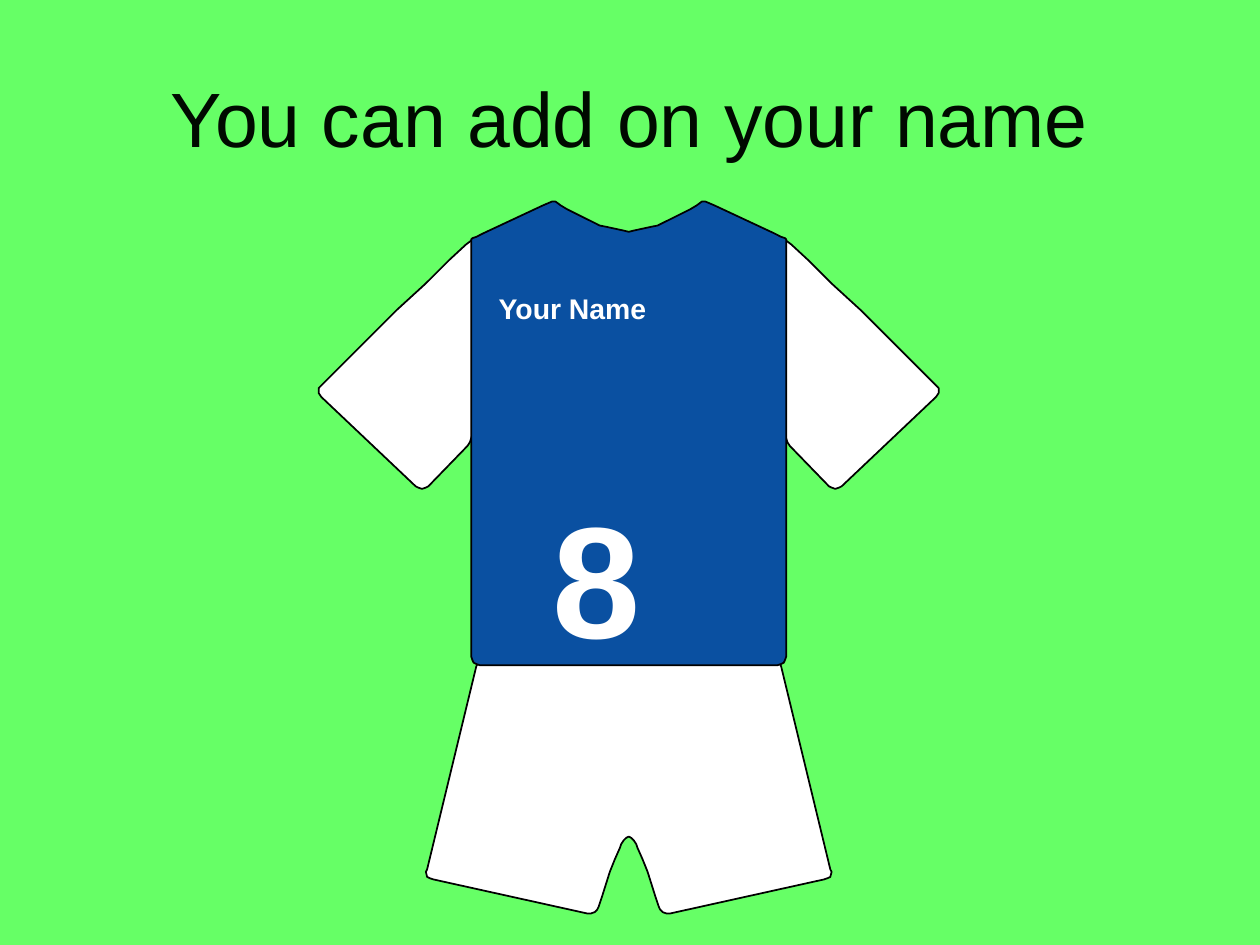
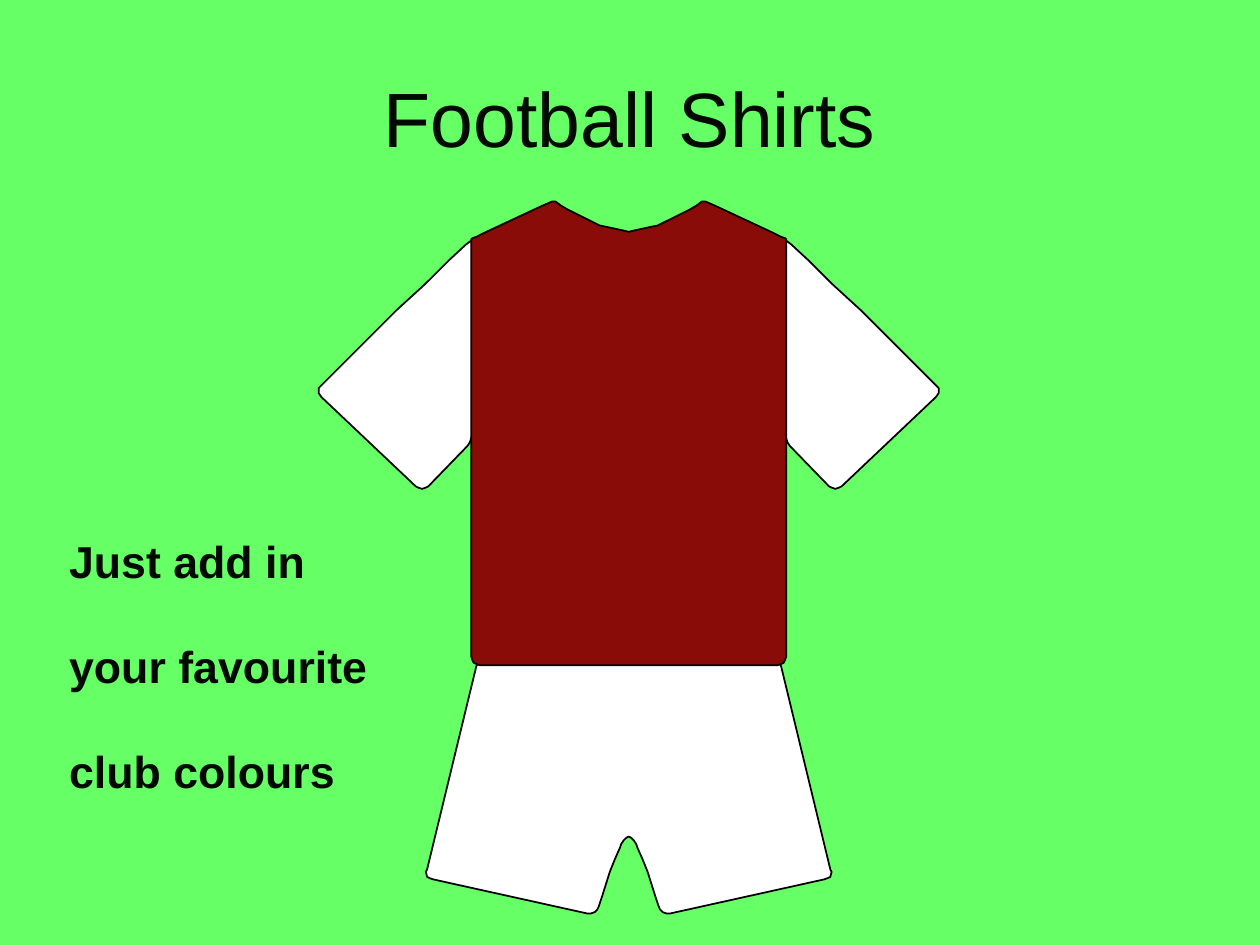
"""Build two slides that show a football kit ready to be personalised."""
from dataclasses import dataclass

from pptx import Presentation
from pptx import util as u
from pptx.dml.color import RGBColor
from pptx.enum import text


@dataclass(frozen=True)
class Theme:
    """Colours, font and type sizes of the deck."""
    grass: str = "66FF66"
    ink: str = "000A00"
    outline: str = "000000"
    white: str = "FFFFFF"
    blue: str = "0A50A1"
    red: str = "890C08"
    font: str = "Arial"
    title_size: int = 44
    message_size: int = 44
    name_size: int = 28
    number_size: int = 156
    lowered: str = "-25000"


THEME = Theme()
KIT_CENTRE = 4.99

LEFT_SHORTS = [
    (4.99, 5.22), (3.85, 5.22), (3.83, 5.23), (3.8, 5.25), (3.78, 5.29),
    (3.39, 6.9), (3.38, 6.92), (3.39, 6.96), (3.41, 6.97), (3.44, 6.98),
    (4.66, 7.25), (4.69, 7.25), (4.72, 7.24), (4.74, 7.22), (4.75, 7.2),
    (4.78, 7.11), (4.84, 6.92), (4.88, 6.82), (4.92, 6.73), (4.93, 6.7),
    (4.95, 6.67), (4.97, 6.65), (4.99, 6.64),
]
LEFT_SLEEVE = [
    (3.71, 3.54), (3.73, 3.51), (3.75, 3.45), (3.76, 3.42), (3.76, 1.9),
    (3.74, 1.91), (3.7, 1.94), (3.57, 2.06), (3.38, 2.25), (3.15, 2.46),
    (2.74, 2.87), (2.55, 3.06), (2.53, 3.08), (2.53, 3.12), (2.55, 3.15),
    (3.3, 3.86), (3.32, 3.87), (3.35, 3.88), (3.38, 3.87), (3.4, 3.86),
]
LEFT_SHIRT = [
    (4.99, 1.84), (4.95, 1.83), (4.81, 1.8), (4.76, 1.79), (4.72, 1.77),
    (4.64, 1.73), (4.56, 1.69), (4.5, 1.66), (4.45, 1.63), (4.41, 1.6),
    (4.38, 1.6), (4.31, 1.63), (3.84, 1.85), (3.78, 1.88), (3.75, 1.89),
    (3.74, 1.9), (3.74, 5.21), (3.75, 5.24), (3.76, 5.26), (3.78, 5.27),
    (3.81, 5.28), (4.99, 5.28),
]


def mirror(points):
    """Reflect points across the centre line of the kit, in reverse order."""
    return [(2 * KIT_CENTRE - x, y) for x, y in reversed(points)]


def add_outline(group, points, colour):
    """Draw a filled, closed outline inside a group."""
    start, *rest = [(u.Inches(x), u.Inches(y)) for x, y in points]
    builder = group.shapes.build_freeform(*start)
    builder.add_line_segments(rest, close=True)
    shape = builder.convert_to_shape()
    shape.shadow.inherit = False
    shape.fill.solid()
    shape.fill.fore_color.rgb = RGBColor.from_string(colour)
    shape.line.color.rgb = RGBColor.from_string(THEME.outline)
    shape.line.width = u.Pt(1)


def add_kit(page, shirt_colour):
    """Draw the shorts, both sleeves and the coloured shirt."""
    group = page.shapes.add_group_shape()
    add_outline(group, LEFT_SHORTS + mirror(LEFT_SHORTS), THEME.white)
    add_outline(group, LEFT_SLEEVE, THEME.white)
    add_outline(group, mirror(LEFT_SLEEVE), THEME.white)
    add_outline(group, LEFT_SHIRT + mirror(LEFT_SHIRT), shirt_colour)


def add_text(page, place, words, size, colour, bold=False, wrap=True,
             anchor=text.MSO_ANCHOR.TOP):
    """Add a one-paragraph text box and return it."""
    box = page.shapes.add_textbox(*map(u.Inches, place))
    frame = box.text_frame
    frame.word_wrap = wrap
    frame.vertical_anchor = anchor
    para = frame.paragraphs[0]
    para.add_run().text = words
    para.font.name = THEME.font
    para.font.size = u.Pt(size)
    para.font.bold = bold
    para.font.color.rgb = RGBColor.from_string(colour)
    return box


def add_title(page, words):
    """Add the centred slide title."""
    box = add_text(page, (0.5, 0.3, 9, 1.25), words, THEME.title_size,
                   THEME.ink, anchor=text.MSO_ANCHOR.MIDDLE)
    box.text_frame.paragraphs[0].alignment = text.PP_ALIGN.CENTER


def add_lowered_text(page, place, words, size, colour, **options):
    """Add bold subscript text in a box that grows with it."""
    box = add_text(page, place, words, size, colour, bold=True, **options)
    box.text_frame.auto_size = text.MSO_AUTO_SIZE.SHAPE_TO_FIT_TEXT
    span = box.text_frame.paragraphs[0].runs[0]
    span._r.get_or_add_rPr().set("baseline", THEME.lowered)


def add_kit_page(deck, title, shirt_colour):
    """Add a green slide with a kit and a title."""
    page = deck.slides.add_slide(deck.slide_layouts[6])
    page.background.fill.solid()
    page.background.fill.fore_color.rgb = RGBColor.from_string(THEME.grass)
    add_kit(page, shirt_colour)
    add_title(page, title)
    return page


def main():
    """Build and save the deck."""
    deck = Presentation()
    deck.slide_width, deck.slide_height = u.Inches(10), u.Inches(7.5)

    name_page = add_kit_page(deck, "You can add on your name", THEME.blue)
    add_lowered_text(name_page, (4.29, 2.31, 1.41, 2.7), "8",
                     THEME.number_size, THEME.white, wrap=False)
    add_lowered_text(name_page, (3.86, 2.03, 2.26, 0.57), "Your Name",
                     THEME.name_size, THEME.white, wrap=False,
                     anchor=text.MSO_ANCHOR.MIDDLE)

    colours_page = add_kit_page(deck, "Football Shirts", THEME.red)
    add_lowered_text(colours_page, (0.45, 3.78, 2.58, 2.51),
                     "Just add in your favourite club colours",
                     THEME.message_size, THEME.ink)

    deck.save("out.pptx")


if __name__ == "__main__":
    main()
